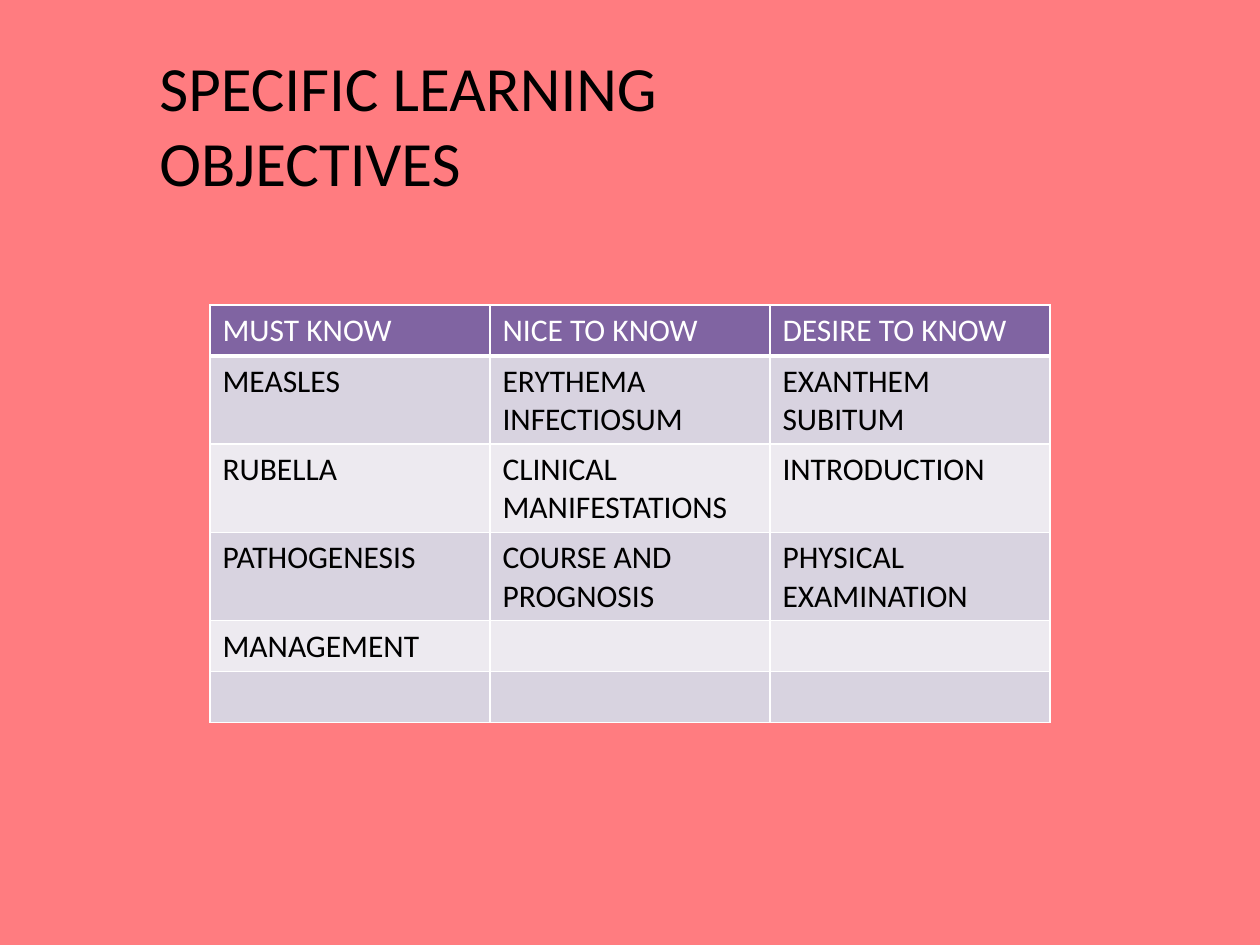
from lxml import etree
from pptx import Presentation
from pptx.dml.color import RGBColor
from pptx.enum.text import MSO_AUTO_SIZE
from pptx.oxml.ns import qn
from pptx.util import Pt

TITLE = "SPECIFIC LEARNING OBJECTIVES"
ROWS = [
    ("MUST KNOW", "NICE TO KNOW", "DESIRE TO KNOW"),
    ("MEASLES", "ERYTHEMA INFECTIOSUM", "EXANTHEM SUBITUM"),
    ("RUBELLA", "CLINICAL MANIFESTATIONS", "INTRODUCTION"),
    ("PATHOGENESIS", "COURSE AND PROGNOSIS", "PHYSICAL EXAMINATION"),
    ("MANAGEMENT", "", ""),
    ("", "", ""),
]

FONT = "Calibri"
BACKGROUND = RGBColor(0xFF, 0x7C, 0x80)
BLACK = RGBColor(0x00, 0x00, 0x00)
WHITE = RGBColor(0xFF, 0xFF, 0xFF)
HEADER = RGBColor(0x80, 0x64, 0xA2)
BANDS = [RGBColor(0xED, 0xEA, 0xF0), RGBColor(0xD8, 0xD3, 0xE0)]
FIT_SHAPE = MSO_AUTO_SIZE.SHAPE_TO_FIT_TEXT

SLIDE_WIDTH, SLIDE_HEIGHT = 1260, 945
TITLE_BOX = (147, 42, 609, 165)
TABLE_LEFT, TABLE_TOP = 210, 305
COLUMN_WIDTH, ROW_HEIGHT = 280, 51


def px(length):
    return round(length * 914400 / 126)


def add_text(para, text, size, color):
    para.font.size = Pt(size)
    if not text:
        return
    span = para.add_run()
    span.text = text
    span.font.name = FONT
    span.font.size = Pt(size)
    span.font.bold = False
    span.font.color.rgb = color


def add_borders(cell, bottom_width):
    properties = cell._tc.get_or_add_tcPr()
    widths = {"lnL": 1, "lnR": 1, "lnT": 1, "lnB": bottom_width}
    for side, width in widths.items():
        line = etree.SubElement(properties, qn(f"a:{side}"), w=str(Pt(width)))
        fill = etree.SubElement(line, qn("a:solidFill"))
        etree.SubElement(fill, qn("a:srgbClr"), val=str(WHITE))


def add_title(page):
    box = page.shapes.add_textbox(*map(px, TITLE_BOX))
    frame = box.text_frame
    frame.word_wrap = True
    frame.auto_size = FIT_SHAPE
    add_text(frame.paragraphs[0], TITLE, 36, BLACK)


def add_objectives(page):
    row_count, column_count = len(ROWS), len(ROWS[0])
    table = page.shapes.add_table(
        row_count, column_count, px(TABLE_LEFT), px(TABLE_TOP),
        px(COLUMN_WIDTH * column_count), px(ROW_HEIGHT * row_count),
    ).table
    for column in table.columns:
        column.width = px(COLUMN_WIDTH)
    for row_index, texts in enumerate(ROWS):
        is_header = row_index == 0
        table.rows[row_index].height = px(ROW_HEIGHT)
        for column_index, text in enumerate(texts):
            cell = table.cell(row_index, column_index)
            add_borders(cell, 3 if is_header else 1)
            cell.fill.solid()
            cell.fill.fore_color.rgb = HEADER if is_header else BANDS[row_index % 2]
            add_text(cell.text_frame.paragraphs[0], text, 18, WHITE if is_header else BLACK)


def main():
    deck = Presentation()
    deck.slide_width, deck.slide_height = px(SLIDE_WIDTH), px(SLIDE_HEIGHT)
    page = deck.slides.add_slide(deck.slide_layouts[6])
    page.background.fill.solid()
    page.background.fill.fore_color.rgb = BACKGROUND
    add_title(page)
    add_objectives(page)
    deck.save("out.pptx")


if __name__ == "__main__":
    main()
